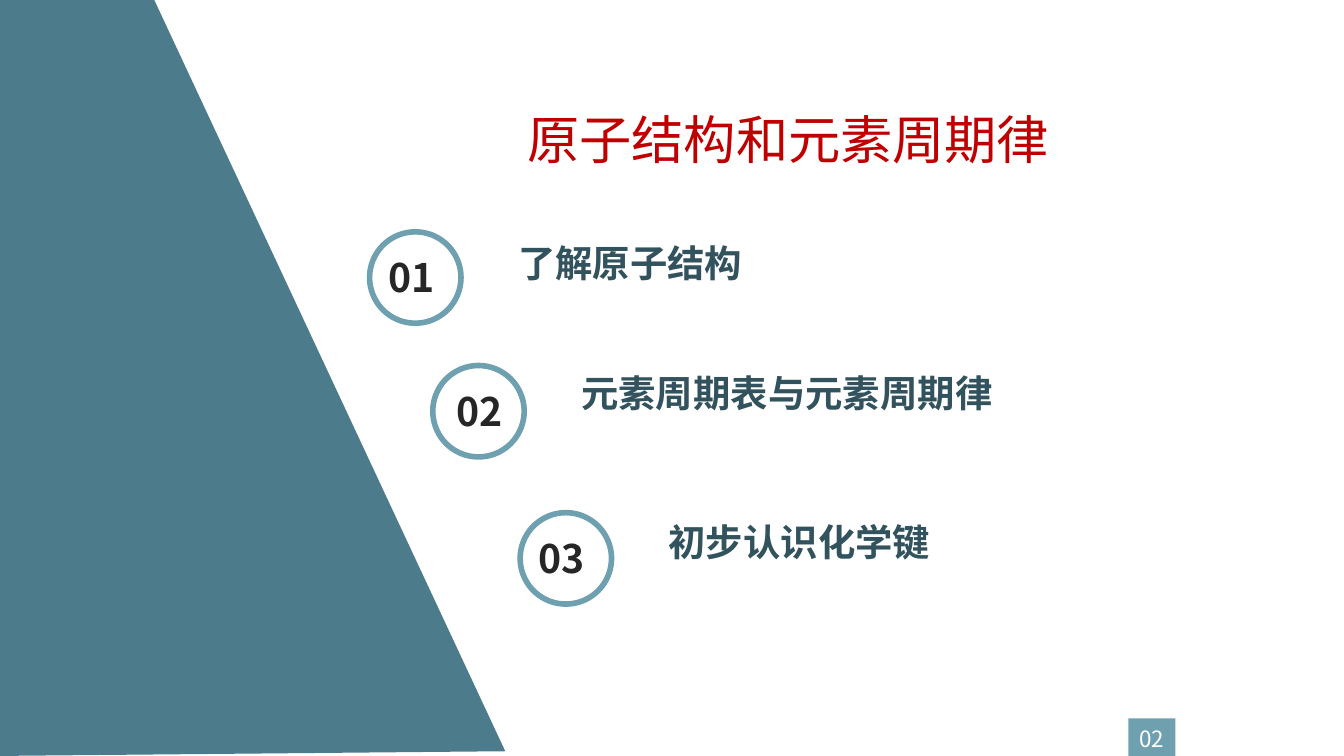
from dataclasses import dataclass

from lxml import etree
from pptx import Presentation
from pptx.dml.color import RGBColor
from pptx.enum.shapes import MSO_SHAPE
from pptx.enum.text import MSO_ANCHOR, MSO_AUTO_SIZE, PP_ALIGN
from pptx.oxml.ns import qn
from pptx.util import Inches, Pt

OVAL, RECT = MSO_SHAPE.OVAL, MSO_SHAPE.RECTANGLE
LEFT, CENTER = PP_ALIGN.LEFT, PP_ALIGN.CENTER
TOP, GROW = MSO_ANCHOR.TOP, MSO_AUTO_SIZE.SHAPE_TO_FIT_TEXT
TITLE_ONLY = 5

# Square grid: 100 columns across a 16:9 slide.
COLS = 100
ROWS = COLS * 9 / 16
UNIT = Inches(10) // COLS


@dataclass(frozen=True)
class Theme:
    font: str = "Noto Sans CJK SC"
    panel: str = "4C7C8B"
    accent: str = "6EA0B0"
    paper: str = "FFFFFF"
    heading: str = "C00000"
    label: str = "32525D"
    number: str = "262626"
    heading_size: int = 28
    label_size: int = 20
    number_size: int = 21
    page_size: int = 12
    ring_width: int = 3


THEME = Theme()


def grid(*values):
    return [round(v * UNIT) for v in values]


def rgb(value):
    return RGBColor.from_string(value)


def write(sp, text, size, color, bold=False, align=CENTER):
    tf = sp.text_frame
    tf.text = text
    tf.word_wrap = True
    tf.vertical_anchor = TOP
    tf.auto_size = GROW
    p = tf.paragraphs[0]
    p.alignment = align
    font = p.runs[0].font
    font.size, font.bold, font.name = Pt(size), bold, THEME.font
    font.color.rgb = rgb(color)
    rPr = p.runs[0]._r.get_or_add_rPr()
    etree.SubElement(rPr, qn("a:ea"), typeface=THEME.font)


def paint(sp, fill, line=None):
    sp.shadow.inherit = False
    sp.fill.solid()
    sp.fill.fore_color.rgb = rgb(fill)
    if line:
        sp.line.color.rgb = rgb(line)
        sp.line.width = Pt(THEME.ring_width)
    else:
        sp.line.fill.background()


def add_panel(s, top_right, bottom_right, bleed):
    """Slanted side panel running just past the slide's left and top edges."""
    builder = s.shapes.build_freeform(*grid(*bottom_right))
    corners = [(top_right, -bleed), (-bleed, -bleed), (-bleed / 2, ROWS)]
    builder.add_line_segments([grid(*c) for c in corners], close=True)
    paint(builder.convert_to_shape(), THEME.panel)


def add_title(s, box, text):
    sp = s.shapes.title
    sp.left, sp.top, sp.width, sp.height = grid(*box)
    write(sp, text, THEME.heading_size, THEME.heading)


def add_item(s, box, number, label, number_shift, label_shift):
    """Ringed number at the box's left, with its label on the right."""
    x, y, w, h = box
    badge = s.shapes.add_group_shape().shapes
    paint(badge.add_shape(OVAL, *grid(x, y, h, h)), THEME.paper, THEME.accent)
    sp = badge.add_textbox(*grid(x + number_shift, y + 1.1, 6.2, 4.5))
    write(sp, number, THEME.number_size, THEME.number, True)
    gap = 1.48 * h
    sp = s.shapes.add_textbox(*grid(x + gap, y + label_shift, w - gap, 4.5))
    write(sp, label, THEME.label_size, THEME.label, True, LEFT)


def add_page_number(s, box, text):
    x, y, w, h = box
    side = 0.85
    tag = s.shapes.add_group_shape().shapes
    paint(tag.add_shape(RECT, *grid(*box)), THEME.accent)
    sp = tag.add_textbox(*grid(x - side, y, w + 2 * side, h + 0.2))
    write(sp, text, THEME.page_size, THEME.paper)


def build_contents(s):
    add_panel(s, top_right=11.3, bottom_right=(37.6, 55.9), bleed=0.4)
    add_title(s, (35.3, 7.5, 46.7, 5.7), "原子结构和元素周期律")
    items = [
        (27.5, 17.25, "了解原子结构", 0, 0.15),
        (32.2, 27.2, "元素周期表与元素周期律", 0.35, -0.15),
        (38.7, 38.15, "初步认识化学键", 0, 0),
    ]
    for i, (x, y, label, number_shift, label_shift) in enumerate(items, 1):
        add_item(s, (x, y, 51, 6.8), f"{i:02}", label, number_shift, label_shift)
    add_page_number(s, (83.95, 53.45, 3.5, 2.8), "02")


def main():
    prs = Presentation()
    prs.slide_width, prs.slide_height = grid(COLS, ROWS)
    build_contents(prs.slides.add_slide(prs.slide_layouts[TITLE_ONLY]))
    prs.save("out.pptx")


if __name__ == "__main__":
    main()
